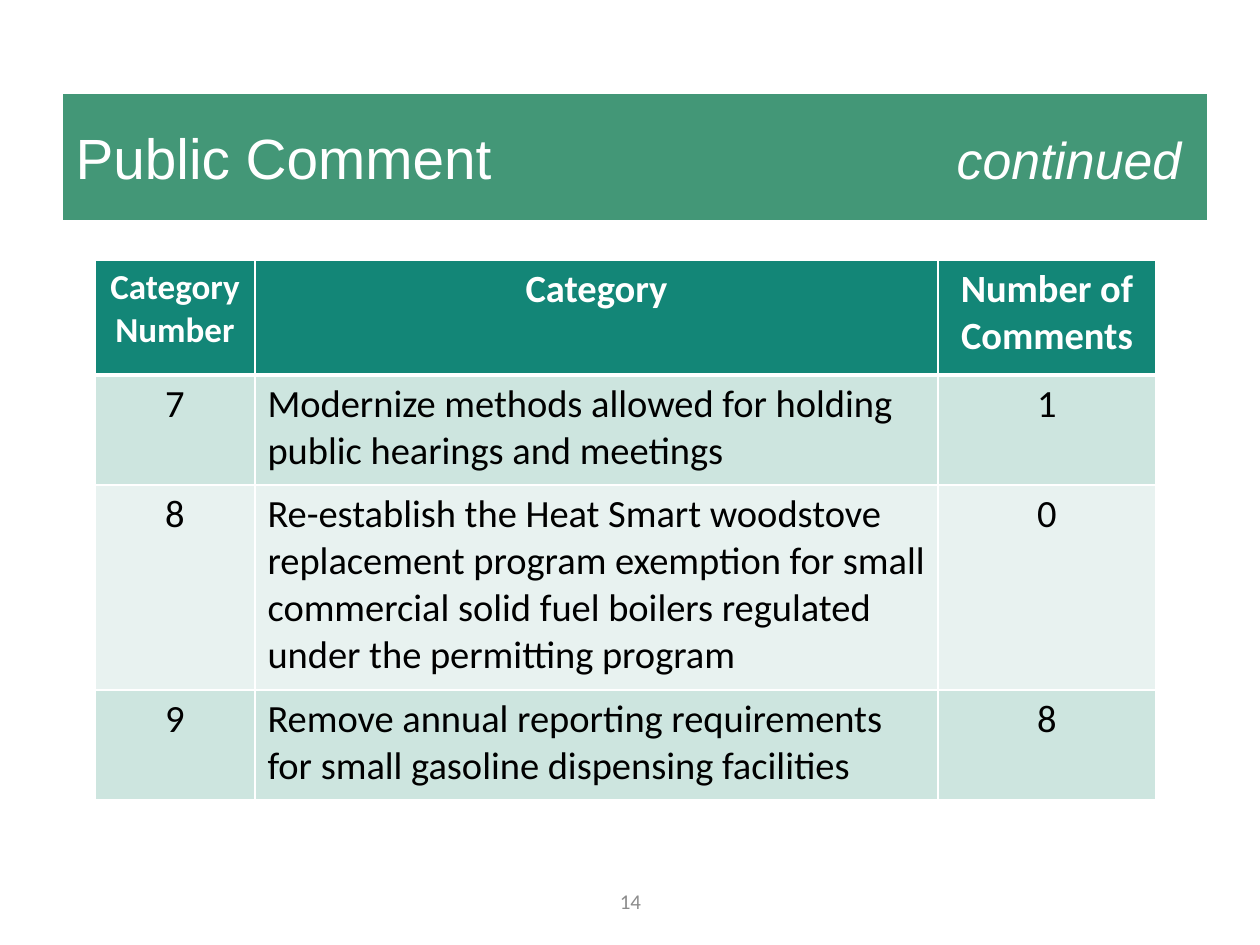
from dataclasses import dataclass

from lxml.etree import SubElement
from pptx import Presentation
from pptx.dml.color import RGBColor
from pptx.enum.text import MSO_ANCHOR as Anchor, MSO_AUTO_SIZE as AutoSize, PP_ALIGN as Align
from pptx.oxml.ns import qn
from pptx.util import Pt

PX = 914400 // 126

WHITE = RGBColor(0xFF, 0xFF, 0xFF)
BLACK = RGBColor(0x00, 0x00, 0x00)
GREY = RGBColor(0x8C, 0x8C, 0x8C)
GREEN = RGBColor(0x43, 0x97, 0x77)
TEAL = RGBColor(0x13, 0x86, 0x77)
BANDS = (RGBColor(0xCD, 0xE5, 0xDF), RGBColor(0xE8, 0xF2, 0xF0))


@dataclass(frozen=True)
class Style:
    size: float
    color: RGBColor
    font: str = "Calibri"
    bold: bool = False
    italic: bool = False


@dataclass(frozen=True)
class Row:
    height: int
    texts: tuple[str, str, str]


TITLE = Style(32.4, WHITE, "Arial")
CONTINUED = Style(29.6, WHITE, "Arial", italic=True)
HEADER_SMALL = Style(20, WHITE, bold=True)
HEADER = Style(22, WHITE, bold=True)
BODY = Style(22, BLACK)
PAGE = Style(12, GREY)

COLUMNS = (160, 683, 218)
ROWS = (
    Row(115, ("Category Number", "Category", "Number of Comments")),
    Row(110, ("7", "Modernize methods allowed for holding public hearings and meetings", "1")),
    Row(205, ("8", "Re-establish the Heat Smart woodstove replacement program exemption for small "
                   "commercial solid fuel boilers regulated under the permitting program", "0")),
    Row(110, ("9", "Remove annual reporting requirements for small gasoline dispensing facilities", "8")),
)


def add_run(p, text: str, style: Style) -> None:
    r = p.add_run()
    r.text = text
    r.font.name = style.font
    r.font.size = Pt(style.size)
    r.font.bold = style.bold
    r.font.italic = style.italic
    r.font.color.rgb = style.color


def place(sp, left: int, top: int, width: int, height: int) -> None:
    sp.left, sp.top, sp.width, sp.height = (v * PX for v in (left, top, width, height))


def add_right_tab(p, position: int) -> None:
    tabs = SubElement(p._p.get_or_add_pPr(), qn("a:tabLst"))
    SubElement(tabs, qn("a:tab"), pos=str(position * PX), algn="r")


def add_border(cell, side: str, width: float) -> None:
    ln = SubElement(cell._tc.get_or_add_tcPr(), qn(f"a:ln{side}"), w=str(Pt(width)))
    fill = SubElement(ln, qn("a:solidFill"))
    SubElement(fill, qn("a:srgbClr"), val=str(WHITE))


def fill_cell(cell, text: str, style: Style, align: Align, fill: RGBColor,
              top: float, bottom: float) -> None:
    for side, width in (("L", 1), ("R", 1), ("T", top), ("B", bottom)):
        add_border(cell, side, width)
    cell.fill.solid()
    cell.fill.fore_color.rgb = fill
    p = cell.text_frame.paragraphs[0]
    p.alignment = align
    add_run(p, text, style)


def add_title(s) -> None:
    sp = s.shapes.title
    place(sp, 63, 94, 1144, 126)
    sp.fill.solid()
    sp.fill.fore_color.rgb = GREEN
    tf = sp.text_frame
    tf.auto_size = AutoSize.NONE
    tf.vertical_anchor = Anchor.MIDDLE
    p = tf.paragraphs[0]
    p.alignment = Align.LEFT
    add_right_tab(p, 1106)
    add_run(p, "Public Comment", TITLE)
    add_run(p, "\t", CONTINUED)
    add_run(p, "continued", CONTINUED)


def add_comment_table(s) -> None:
    height = sum(row.height for row in ROWS)
    table = s.shapes.add_table(len(ROWS), len(COLUMNS), 95 * PX, 260 * PX,
                               sum(COLUMNS) * PX, height * PX).table
    for column, width in zip(table.columns, COLUMNS):
        column.width = width * PX
    for i, row in enumerate(ROWS):
        table.rows[i].height = row.height * PX
        is_header = i == 0
        fill = TEAL if is_header else BANDS[(i - 1) % 2]
        for j, text in enumerate(row.texts):
            if is_header:
                style = HEADER_SMALL if j == 0 else HEADER
            else:
                style = BODY
            align = Align.LEFT if j == 1 and not is_header else Align.CENTER
            fill_cell(table.cell(i, j), text, style, align, fill,
                      top=3 if i == 1 else 1, bottom=3 if is_header else 1)


def add_page_number(s) -> None:
    sp = s.shapes.add_textbox(431 * PX, 876 * PX, 399 * PX, 50 * PX)
    tf = sp.text_frame
    tf.word_wrap = True
    tf.vertical_anchor = Anchor.MIDDLE
    p = tf.paragraphs[0]
    p.alignment = Align.CENTER
    add_run(p, "14", PAGE)


def main() -> None:
    prs = Presentation()
    prs.slide_width, prs.slide_height = 1260 * PX, 945 * PX
    s = prs.slides.add_slide(prs.slide_layouts[5])
    add_title(s)
    add_comment_table(s)
    add_page_number(s)
    prs.save("out.pptx")


if __name__ == "__main__":
    main()
